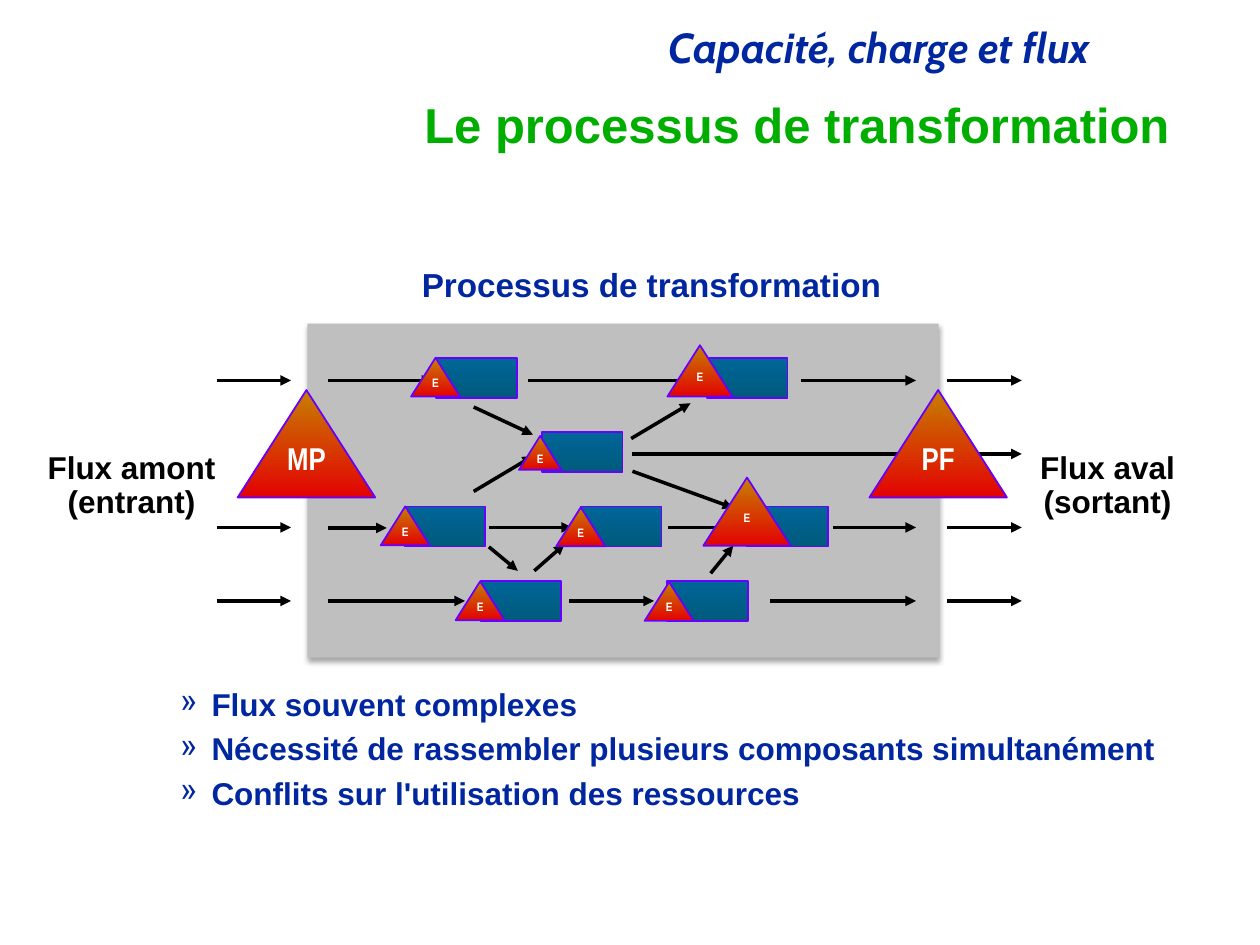
from typing import NamedTuple

from lxml.etree import SubElement
from pptx import Presentation
from pptx.dml.color import RGBColor
from pptx.enum.shapes import MSO_CONNECTOR, MSO_SHAPE
from pptx.enum.text import MSO_ANCHOR, MSO_AUTO_SIZE, PP_ALIGN
from pptx.oxml.ns import qn
from pptx.util import Pt

BLUE, GREEN, BLACK, WHITE = "00279F", "00AE00", "000000", "FFFFFF"
EDGE, GREY = "6600FF", "BFBFBF"
STEEL = ("006699", "005A7C")
FLAME = ("C68000", "E30202")
LANES = [217.4 + 42 * row for row in range(4)]
TOPS = [204.4 + 42.5 * row for row in range(4)]
LEFT, RIGHT = PP_ALIGN.LEFT, PP_ALIGN.RIGHT
CENTER = PP_ALIGN.CENTER


class Label(NamedTuple):
    lines: list[str]
    x: float
    y: float
    w: float
    h: float
    size: float
    color: str
    align: PP_ALIGN = LEFT
    face: str = "Arial"
    slant: bool = False
    wrap: bool = True
    grow: bool = True
    bullet: bool = False


class Stock(NamedTuple):
    x: float
    y: float
    w: float
    h: float
    text: str = "E"
    size: float = 7


class Arrow(NamedTuple):
    x1: float
    y1: float
    x2: float
    y2: float


LABELS = [
    Label(["Capacité, charge et flux"], 84.2, 12.2, 545.8, 33.1, 24, BLUE,
          RIGHT, "Cabin", slant=True),
    Label(["Le processus de transformation"], 105, 54.7, 570.3, 36, 28, GREEN,
          RIGHT, grow=False),
    Label(["Flux souvent complexes",
           "Nécessité de rassembler plusieurs composants simultanément",
           "Conflits sur l'utilisation des ressources"],
          23.8, 390.2, 671.8, 77.8, 18, BLUE, grow=False, bullet=True),
    Label(["Processus de transformation"], 234, 149.8, 277.9, 27.4, 19, BLUE,
          wrap=False),
    Label(["Flux amont", "(entrant)"], 19.4, 254.9, 111.6, 46, 18, BLACK,
          CENTER, wrap=False),
    Label(["Flux aval", "(sortant)"], 586.8, 254.9, 92.2, 46, 18, BLACK,
          CENTER, wrap=False),
]

# Machines: left edges on each lane
POSTS = [(249.1, 403.9), (309.6,), (231.1, 331.9, 427), (274.6, 381.2)]

# Level arrows: start and end on each lane
FLOWS = [
    [(123.8, 166.3), (187.2, 247), (301.7, 397.4), (457.9, 523.4),
     (541.4, 583.9)],
    [(361.4, 523.4), (541.4, 583.9)],
    [(123.8, 166.3), (279.4, 326.9), (381.6, 424.1), (475.9, 523.4),
     (541.4, 583.9)],
    [(123.8, 166.3), (187.2, 265.7), (325.4, 373.7), (439.9, 523.4),
     (541.4, 583.9)],
]

LINKS = [
    Arrow(270.7, 232.6, 304.6, 248.4), Arrow(360.7, 250.6, 394.6, 230.4),
    Arrow(361.4, 269.3, 419, 290.2), Arrow(270.7, 280.8, 304.6, 260.6),
    Arrow(305.3, 326.2, 322.6, 311), Arrow(279.4, 312.5, 295.9, 326.2),
    Arrow(406.1, 327.6, 419, 311.8),
]

STOCKS = [
    Stock(234.9, 204.4, 28, 22.2), Stock(381.4, 197.3, 37.2, 29.3),
    Stock(401.9, 272.9, 50, 39), Stock(296.6, 249.1, 24.2, 19.4),
    Stock(317.9, 289.9, 28, 22.2), Stock(368.4, 332.6, 28, 22.2),
    Stock(217.6, 289.4, 28, 22.2), Stock(260.4, 332.2, 28, 22.2),
    Stock(135.8, 222.9, 78.6, 61.4, "MP", 18),
    Stock(496.8, 222.9, 78.6, 61.4, "PF", 18),
]


def tint(target, code: str) -> None:
    """Color a font, a line or a gradient stop."""
    target.color.rgb = RGBColor.from_string(code)


def write(frame, lines: list[str], size: float, color: str, face: str,
          align: PP_ALIGN) -> None:
    frame.text = "\n".join(lines)
    for para in frame.paragraphs:
        para.alignment = align
        para.line_spacing = 0.9
        font = para.font
        font.name, font.size, font.bold = face, Pt(size), True
        tint(font, color)


def mark(para) -> None:
    para.level = 2
    para.space_before = Pt(6)
    props = para._p.get_or_add_pPr()
    props.set("marL", str(Pt(90)))
    props.set("indent", str(Pt(-18)))
    SubElement(props, qn("a:buChar"), char="»")


def add_label(slide, item: Label) -> None:
    box = slide.shapes.add_textbox(Pt(item.x), Pt(item.y), Pt(item.w),
                                   Pt(item.h))
    frame = box.text_frame
    write(frame, item.lines, item.size, item.color, item.face, item.align)
    frame.word_wrap = item.wrap
    if item.grow:
        frame.auto_size = MSO_AUTO_SIZE.SHAPE_TO_FIT_TEXT
    else:
        frame.auto_size = MSO_AUTO_SIZE.NONE
        if not item.bullet:
            frame.vertical_anchor = MSO_ANCHOR.MIDDLE
    for para in frame.paragraphs:
        para.font.italic = item.slant
        if item.bullet:
            mark(para)


def add_form(slide, kind: MSO_SHAPE, x: float, y: float, w: float, h: float):
    form = slide.shapes.add_shape(kind, Pt(x), Pt(y), Pt(w), Pt(h))
    form.shadow.inherit = False
    return form


def shade(form, tones: tuple[str, str]) -> None:
    form.fill.gradient()
    form.fill.gradient_angle = 270
    for stop, tone in zip(form.fill.gradient_stops, tones):
        tint(stop, tone)
    tint(form.line, EDGE)
    form.line.width = Pt(1)


def add_panel(slide) -> None:
    panel = add_form(slide, MSO_SHAPE.RECTANGLE, 175.7, 185, 360.7, 190.8)
    panel.fill.solid()
    panel.fill.fore_color.rgb = RGBColor.from_string(GREY)
    panel.line.fill.background()
    glow = SubElement(panel._element.spPr.find(qn("a:effectLst")),
                      qn("a:outerShdw"), blurRad=str(Pt(3.1)),
                      dist=str(Pt(1.8)), dir="5400000", rotWithShape="0")
    tone = SubElement(glow, qn("a:srgbClr"), val=BLACK)
    SubElement(tone, qn("a:alpha"), val="35000")


def add_arrow(slide, item: Arrow) -> None:
    line = slide.shapes.add_connector(MSO_CONNECTOR.STRAIGHT,
                                      *(Pt(part) for part in item))
    tint(line.line, BLACK)
    line.line.width = Pt(2)
    SubElement(line.line._get_or_add_ln(), qn("a:tailEnd"), type="triangle")
    SubElement(line._element.spPr, qn("a:effectLst"))


def add_stock(slide, item: Stock) -> None:
    form = add_form(slide, MSO_SHAPE.ISOSCELES_TRIANGLE, item.x, item.y,
                    item.w, item.h)
    shade(form, FLAME)
    frame = form.text_frame
    frame.margin_left = frame.margin_right = 0
    frame.margin_top = frame.margin_bottom = 0
    frame.vertical_anchor = MSO_ANCHOR.TOP
    write(frame, [item.text], item.size, WHITE, "Arial Narrow", CENTER)


def main() -> None:
    deck = Presentation()
    deck.slide_width, deck.slide_height = Pt(720), Pt(540)
    slide = deck.slides.add_slide(deck.slide_layouts[6])

    # Texts and panel
    for label in LABELS:
        add_label(slide, label)
    add_panel(slide)

    # Machines
    for top, row in zip(TOPS, POSTS):
        for x in row:
            shade(add_form(slide, MSO_SHAPE.RECTANGLE, x, top, 46.2, 22.9),
                  STEEL)

    # Flows, then stocks above them
    for y, row in zip(LANES, FLOWS):
        for start, end in row:
            add_arrow(slide, Arrow(start, y, end, y))
    for link in LINKS:
        add_arrow(slide, link)
    for stock in STOCKS:
        add_stock(slide, stock)
    add_arrow(slide, Arrow(187.2, 301.7, 221, 301.7))

    deck.save("out.pptx")


if __name__ == "__main__":
    main()
